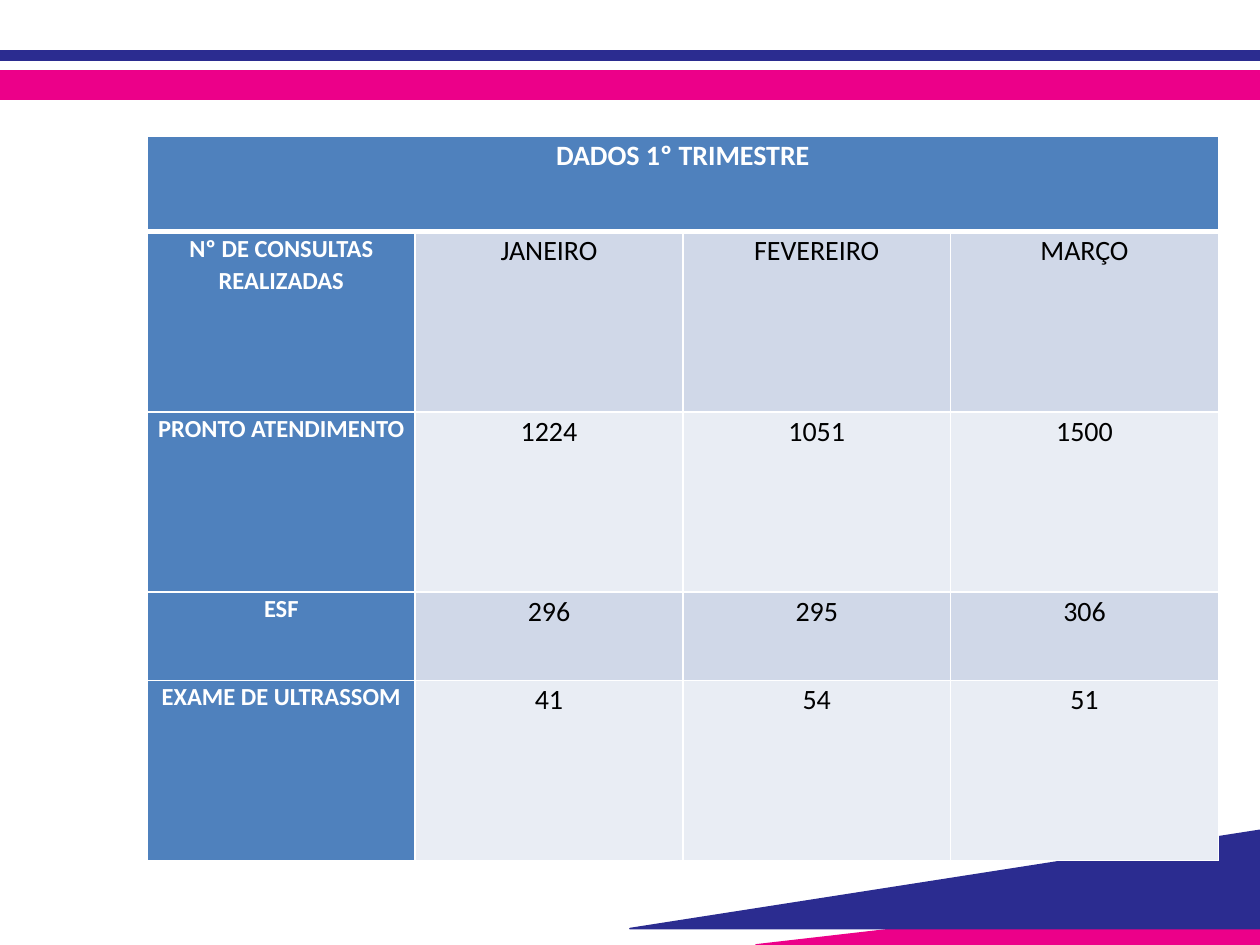
from dataclasses import dataclass

from lxml.etree import SubElement
from pptx import Presentation
from pptx.dml.color import RGBColor
from pptx.enum.shapes import MSO_SHAPE
from pptx.enum.text import PP_ALIGN
from pptx.oxml.ns import qn
from pptx.util import Inches, Pt

WIDE, HIGH = Inches(10), Inches(7.5)
NAVY = RGBColor(0x2B, 0x2C, 0x90)
PINK = RGBColor(0xEC, 0x00, 0x89)
BLUE = RGBColor(0x4F, 0x81, 0xBD)
DARK = RGBColor(0xD0, 0xD8, 0xE8)
PALE = RGBColor(0xE9, 0xED, 0xF4)
WHITE = RGBColor(0xFF, 0xFF, 0xFF)
BLACK = RGBColor(0x00, 0x00, 0x00)


@dataclass
class Band:
    top: float
    high: float
    color: RGBColor


@dataclass
class Wedge:
    left: float
    top: float
    base: float
    color: RGBColor


@dataclass
class Row:
    high: float
    label: str
    values: tuple[str, ...]


BANDS = (Band(0.4 / 7.5, 0.08 / 7.5, NAVY), Band(0.56 / 7.5, 0.03, PINK))
WEDGES = (
    Wedge(0.6, 7.04 / 7.5, 1, PINK),
    Wedge(0.5, 6.59 / 7.5, 7.37 / 7.5, NAVY),
)
TITLE = "DADOS 1º TRIMESTRE"
HEAD = 0.76
ROWS = (
    Row(1.43, "Nº DE CONSULTAS REALIZADAS", ("JANEIRO", "FEVEREIRO", "MARÇO")),
    Row(1.43, "PRONTO ATENDIMENTO", ("1224", "1051", "1500")),
    Row(0.7, "ESF", ("296", "295", "306")),
    Row(1.43, "EXAME DE ULTRASSOM", ("41", "54", "51")),
)


def paint(shape, color: RGBColor) -> None:
    shape.shadow.inherit = False
    shape.fill.solid()
    shape.fill.fore_color.rgb = color
    shape.line.color.rgb = color
    shape.line.width = Pt(0.96)


def add_band(slide, band: Band) -> None:
    shape = slide.shapes.add_shape(
        MSO_SHAPE.RECTANGLE, 0, int(band.top * HIGH), WIDE, int(band.high * HIGH)
    )
    paint(shape, band.color)


def add_wedge(slide, wedge: Wedge) -> None:
    top, base = int(wedge.top * HIGH), int(wedge.base * HIGH)
    pen = slide.shapes.build_freeform(WIDE, top)
    pen.add_line_segments([(int(wedge.left * WIDE), base), (WIDE, base)], close=True)
    paint(pen.convert_to_shape(), wedge.color)


def add_edge(cell, side: str, width: float) -> None:
    props = cell._tc.get_or_add_tcPr()
    edge = SubElement(props, qn(f"a:{side}"), w=str(Pt(width)))
    fill = SubElement(edge, qn("a:solidFill"))
    SubElement(fill, qn("a:srgbClr"), val=str(WHITE))


def fill_cell(
    cell, text: str, size: int, color: RGBColor, back: RGBColor, bold: bool
) -> None:
    cell.fill.solid()
    cell.fill.fore_color.rgb = back
    cell.margin_left = cell.margin_right = Inches(0.07)
    cell.margin_top = cell.margin_bottom = 0
    para = cell.text_frame.paragraphs[0]
    para.alignment = PP_ALIGN.CENTER
    para.line_spacing = 1.07
    run = para.add_run()
    run.text = text
    run.font.name = "Calibri"
    run.font.size = Pt(size)
    run.font.bold = bold
    run.font.color.rgb = color


def add_grid(slide) -> None:
    count = len(ROWS[0].values) + 1
    highs = [HEAD] + [row.high for row in ROWS]
    table = slide.shapes.add_table(
        len(highs), count, Inches(1.17), Inches(1.08),
        int(0.85 * WIDE), Inches(sum(highs)),
    ).table
    for y, high in enumerate(highs):
        table.rows[y].height = Inches(high)
        for x in range(count):
            cell = table.cell(y, x)
            add_edge(cell, "lnL", 1)
            add_edge(cell, "lnR", 1)
            add_edge(cell, "lnT", 3 if y == 1 else 1)
            add_edge(cell, "lnB", 3 if y == 0 else 1)
    table.cell(0, 0).merge(table.cell(0, count - 1))
    fill_cell(table.cell(0, 0), TITLE, 16, WHITE, BLUE, True)
    for y, row in enumerate(ROWS, 1):
        fill_cell(table.cell(y, 0), row.label, 14, WHITE, BLUE, True)
        back = DARK if y % 2 else PALE
        for x, value in enumerate(row.values, 1):
            fill_cell(table.cell(y, x), value, 16, BLACK, back, False)


def main() -> None:
    deck = Presentation()
    deck.slide_width, deck.slide_height = WIDE, HIGH
    slide = deck.slides.add_slide(deck.slide_layouts[6])
    for band in BANDS:
        add_band(slide, band)
    for wedge in WEDGES:
        add_wedge(slide, wedge)
    add_grid(slide)
    deck.save("out.pptx")


if __name__ == "__main__":
    main()
